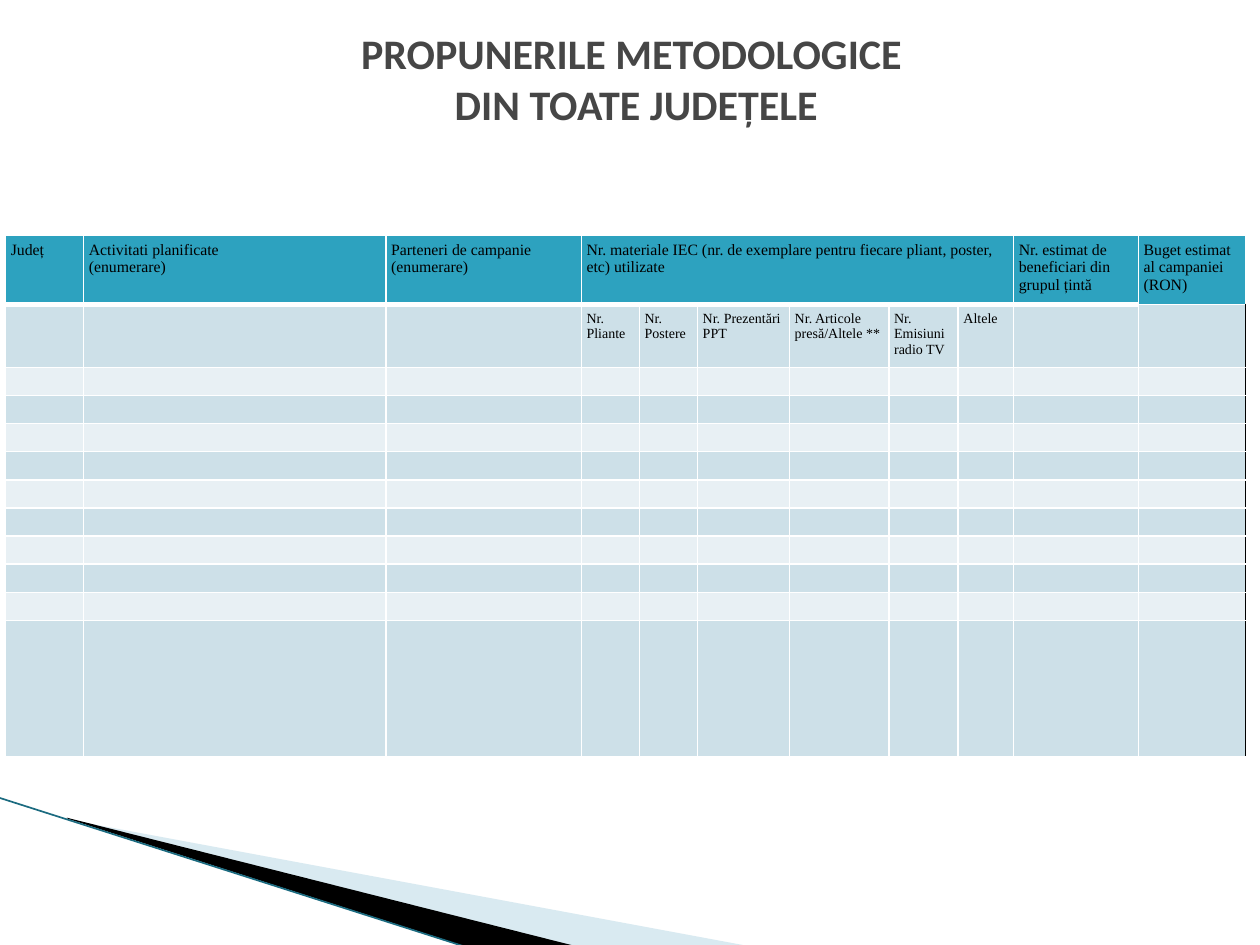
import pptx
import pptx.dml.color
import pptx.enum.text
import pptx.oxml
import pptx.oxml.ns
import pptx.util
from lxml import etree

Pt = pptx.util.Pt
qn = pptx.oxml.ns.qn

WHITE, BLACK = "FFFFFF", "000000"
HEADER_FILL = "2DA2BF"
BAND_FILLS = ("CDE0E8", "E8F0F4")

TITLE = "PROPUNERILE METODOLOGICE \vDIN TOATE JUDEȚELE"
COLUMN_WIDTHS = [44.6, 172.8, 111.6, 33.2, 33.2, 52.6, 56.8, 39.6, 31.7, 71.3, 61.2]
ROW_HEIGHTS = [39.2, 33.6] + [16.1] * 9 + [78]
HEADERS = {
    0: "Județ",
    1: "Activitati planificate\n(enumerare)",
    2: "Parteneri de campanie\n(enumerare)",
    3: "Nr. materiale IEC (nr. de exemplare pentru fiecare pliant, poster, etc) utilizate",
    9: "Nr. estimat de beneficiari din grupul țintă",
    10: "Buget estimat al campaniei (RON)",
}
SUBHEADERS = {
    3: "Nr. Pliante",
    4: "Nr. Postere",
    5: "Nr. Prezentări PPT",
    6: "Nr. Articole presă/Altele **",
    7: "Nr. Emisiuni radio TV",
    8: "Altele",
}
MATERIALS_FIRST, MATERIALS_LAST = 3, 8


def color(value):
    return pptx.dml.color.RGBColor.from_string(value)


class SlideBuilder:
    title_font = "Calibri"
    table_font = "Times New Roman"

    def __init__(self, slide):
        self.slide = slide

    def format_text(self, text_frame, font_name, size, text_color, bold=False):
        for paragraph in text_frame.paragraphs:
            for run in paragraph.runs:
                run.font.name = font_name
                run.font.size = Pt(size)
                run.font.bold = bold
                run.font.color.rgb = color(text_color)

    def polygon(self, points, fill, opacity=100):
        corners = [(Pt(x), Pt(y)) for x, y in points]
        builder = self.slide.shapes.build_freeform(*corners[0])
        builder.add_line_segments(corners[1:], close=True)
        shape = builder.convert_to_shape()
        shape.shadow.inherit = False
        shape.fill.solid()
        shape.fill.fore_color.rgb = color(fill)
        shape.line.fill.background()
        if opacity < 100:
            fill_color = shape.fill._xPr.find(".//" + qn("a:srgbClr"))
            etree.SubElement(fill_color, qn("a:alpha"), val=str(opacity * 1000))

    def line(self, start, end, line_color, width):
        connector = self.slide.shapes.add_connector(
            pptx.enum.shapes.MSO_CONNECTOR.STRAIGHT, *map(Pt, start + end))
        connector.line.color.rgb = color(line_color)
        connector.line.width = Pt(width)
        etree.SubElement(connector._element.spPr, qn("a:effectLst"))

    def title(self, text, left, top, width, height):
        box = self.slide.shapes.add_textbox(*map(Pt, (left, top, width, height)))
        text_frame = box.text_frame
        text_frame.word_wrap = True
        text_frame.vertical_anchor = pptx.enum.text.MSO_ANCHOR.MIDDLE
        text_frame.text = text
        text_frame.paragraphs[0].alignment = pptx.enum.text.PP_ALIGN.CENTER
        self.format_text(text_frame, self.title_font, 24, "464646", bold=True)

    def border(self, cell, side, line_color, width):
        """Draw one cell edge; side is L, R, T or B, in that order."""
        properties = cell._tc.get_or_add_tcPr()
        line = etree.SubElement(properties, qn("a:ln" + side), w=str(Pt(width)))
        fill = etree.SubElement(line, qn("a:solidFill"))
        etree.SubElement(fill, qn("a:srgbClr"), val=line_color)

    def cell(self, cell, text, size, fill, borders):
        for side, (line_color, width) in borders.items():
            self.border(cell, side, line_color, width)
        cell.fill.solid()
        cell.fill.fore_color.rgb = color(fill)
        cell.margin_left = cell.margin_right = Pt(3)
        cell.margin_top = cell.margin_bottom = Pt(3.6)
        if text:
            cell.text_frame.text = text
            self.format_text(cell.text_frame, self.table_font, size, BLACK)
        else:
            paragraph = cell.text_frame.paragraphs[0]
            etree.SubElement(paragraph._p, qn("a:endParaRPr"), sz="700")

    def table(self, left, top, widths, heights):
        frame = self.slide.shapes.add_table(
            len(heights), len(widths),
            *map(Pt, (left, top, sum(widths), sum(heights))))
        table = frame.table
        for column, width in zip(table.columns, widths):
            column.width = Pt(width)
        for row, height in zip(table.rows, heights):
            row.height = Pt(height)
        return table


def fill_table(builder, table):
    last_column = len(COLUMN_WIDTHS) - 1
    table.cell(0, MATERIALS_FIRST).merge(table.cell(0, MATERIALS_LAST))
    for row in range(len(ROW_HEIGHTS)):
        texts = {0: HEADERS, 1: SUBHEADERS}.get(row, {})
        fill = BAND_FILLS[(row - 1) % 2] if row else HEADER_FILL
        for column in range(last_column + 1):
            borders = {side: (WHITE, 1) for side in "LRTB"}
            if column == last_column and row:
                borders["R"] = (BLACK, 1)
            if column < last_column and row < 2:
                borders["T" if row else "B"] = (WHITE, 3)
            builder.cell(table.cell(row, column), texts.get(column, ""),
                         8 if row else 9, fill, borders)


def main():
    presentation = pptx.Presentation()
    presentation.slide_width, presentation.slide_height = Pt(720), Pt(540)
    slide = presentation.slides.add_slide(presentation.slide_layouts[6])
    builder = SlideBuilder(slide)

    builder.polygon([(39.6, 468.5), (428.4, 540.7), (328.3, 540.7), (39.6, 468)],
                    "A0CBDC", opacity=40)
    builder.polygon([(38.2, 467.3), (329, 540.7), (267.8, 541.4), (38.9, 468)], BLACK)
    builder.line((-0.7, 455.8), (267.1, 541.4), "1B6B80", 0.95)
    builder.title(TITLE, 21.6, 11.5, 684, 66.2)
    fill_table(builder, builder.table(3.2, 134.2, COLUMN_WIDTHS, ROW_HEIGHTS))

    presentation.save("out.pptx")


if __name__ == "__main__":
    main()
